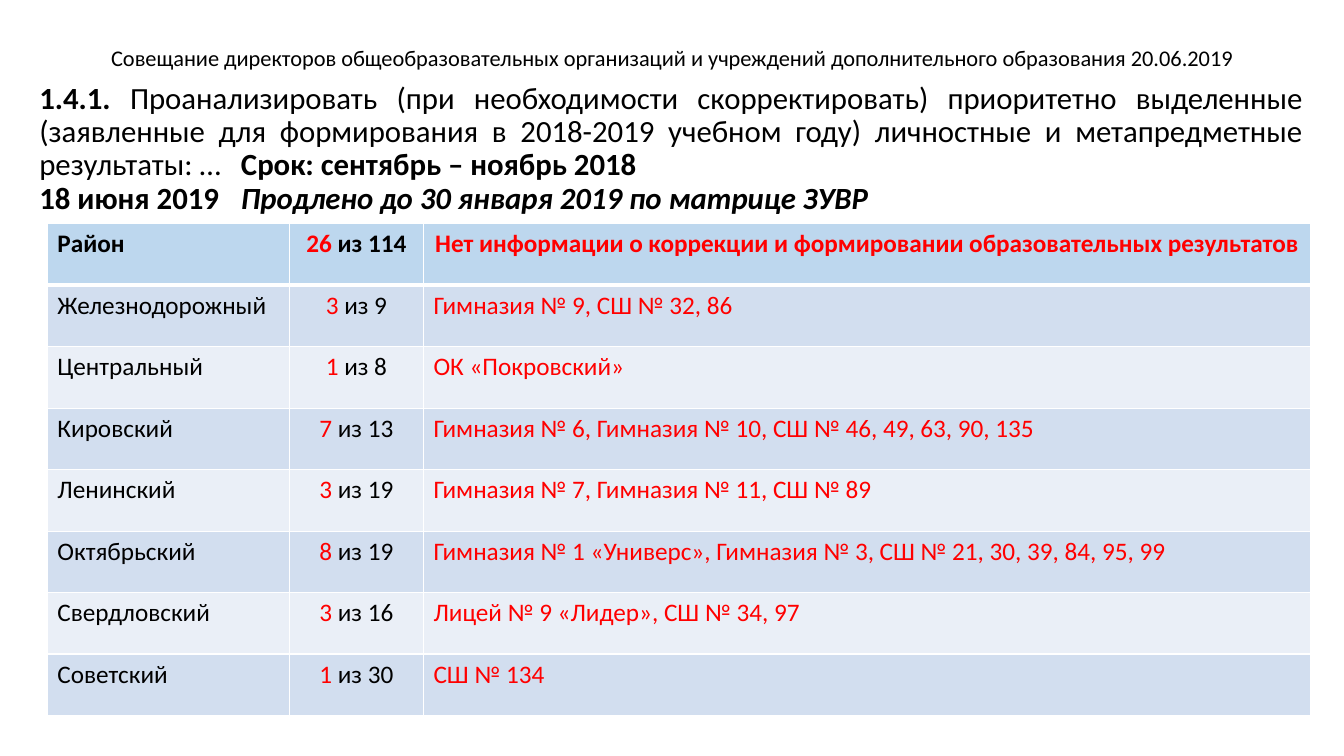
from lxml import etree
from pptx import Presentation
from pptx.dml.color import RGBColor
from pptx.enum.text import MSO_ANCHOR, MSO_AUTO_SIZE, PP_ALIGN
from pptx.oxml.ns import qn
from pptx.util import Pt

EMU_PER_PX = 9144
LEFT, CENTER, JUSTIFY = PP_ALIGN.LEFT, PP_ALIGN.CENTER, PP_ALIGN.JUSTIFY
MIDDLE = MSO_ANCHOR.MIDDLE
NO_AUTOFIT = MSO_AUTO_SIZE.NONE
BLACK, RED, WHITE = "000000", "FF0000", "FFFFFF"
HEADER_FILL, ODD_FILL, EVEN_FILL = "BDD7EE", "D2DEEF", "EAEFF7"

TITLE = ("Совещание директоров общеобразовательных организаций и учреждений "
         "дополнительного образования 20.06.2019")
TASK = ("Проанализировать (при необходимости скорректировать) приоритетно выделенные "
        "(заявленные для формирования в 2018-2019 учебном году) личностные и "
        "метапредметные результаты: …\t")
DISTRICTS = [
    ("Район", 26, 114, "Нет информации о коррекции и формировании образовательных результатов"),
    ("Железнодорожный", 3, 9, "Гимназия № 9, СШ № 32, 86"),
    ("Центральный", 1, 8, "ОК «Покровский»"),
    ("Кировский", 7, 13, "Гимназия № 6, Гимназия № 10, СШ № 46, 49, 63, 90, 135"),
    ("Ленинский", 3, 19, "Гимназия № 7, Гимназия № 11, СШ № 89"),
    ("Октябрьский", 8, 19, "Гимназия № 1 «Универс», Гимназия № 3, СШ № 21, 30, 39, 84, 95, 99"),
    ("Свердловский", 3, 16, "Лицей № 9 «Лидер», СШ № 34, 97"),
    ("Советский", 1, 30, "СШ № 134"),
]


def px(length):
    return length * EMU_PER_PX


def color(value):
    return RGBColor.from_string(value)


class SlideBuilder:
    """Holds the text style and the current slide, and adds elements to it."""

    def __init__(self, slide, font_name):
        self.slide = slide
        self.font_name = font_name

    def add_runs(self, paragraph, runs, size, alignment):
        paragraph.alignment = alignment
        for text, value, bold, italic in runs:
            run = paragraph.add_run()
            run.text = text
            font = run.font
            font.name, font.size = self.font_name, Pt(size)
            font.bold, font.italic = bold, italic
            font.color.rgb = color(value)

    def place(self, shape, left, top, width, height):
        shape.left, shape.top = px(left), px(top)
        shape.width, shape.height = px(width), px(height)
        shape.text_frame.word_wrap = True
        shape.text_frame.auto_size = NO_AUTOFIT

    def title(self, text, size, *box):
        shape = self.slide.shapes.title
        self.place(shape, *box)
        shape.text_frame.vertical_anchor = MIDDLE
        paragraph = shape.text_frame.paragraphs[0]
        paragraph.line_spacing = 0.9
        self.add_runs(paragraph, [(text, BLACK, False, False)], size, CENTER)

    def body(self, entries, size, *box):
        shape = self.slide.placeholders[1]
        self.place(shape, *box)
        frame = shape.text_frame
        for index, (runs, space_before, tab, tab_alignment) in enumerate(entries):
            paragraph = frame.add_paragraph() if index else frame.paragraphs[0]
            self.add_runs(paragraph, runs, size, JUSTIFY)
            paragraph.line_spacing = 0.9
            paragraph.space_before = Pt(space_before)
            properties = paragraph._p.get_or_add_pPr()
            properties.set("marL", "0")
            properties.set("indent", "0")
            etree.SubElement(properties, qn("a:buNone"))
            tabs = etree.SubElement(properties, qn("a:tabLst"))
            etree.SubElement(tabs, qn("a:tab"), pos=str(px(tab)), algn=tab_alignment)

    def borders(self, cell, bottom):
        properties = cell._tc.get_or_add_tcPr()
        widths = {"lnL": 1, "lnR": 1, "lnT": 1, "lnB": bottom}
        for index, (side, width) in enumerate(widths.items()):
            line = etree.Element(qn(f"a:{side}"), w=str(Pt(width)))
            fill = etree.SubElement(line, qn("a:solidFill"))
            etree.SubElement(fill, qn("a:srgbClr"), val=WHITE)
            properties.insert(index, line)

    def table(self, districts, size, left, top, column_widths, row_height):
        table = self.slide.shapes.add_table(
            len(districts), len(column_widths), px(left), px(top),
            px(sum(column_widths)), px(row_height * len(districts))).table
        for column, width in zip(table.columns, column_widths):
            column.width = px(width)
        for index, (district, count, total, schools) in enumerate(districts):
            header = index == 0
            fill = HEADER_FILL if header else ODD_FILL if index % 2 else EVEN_FILL
            contents = [
                ([(district, BLACK, header, False)], LEFT),
                ([(str(count), RED, header, False),
                  (f" из {total}", BLACK, header, False)], CENTER),
                ([(schools, RED, header, False)], CENTER if header else LEFT),
            ]
            for cell, (runs, alignment) in zip(table.rows[index].cells, contents):
                cell.fill.solid()
                cell.fill.fore_color.rgb = color(fill)
                self.borders(cell, 3 if header else 1)
                self.add_runs(cell.text_frame.paragraphs[0], runs, size, alignment)


def main():
    presentation = Presentation()
    presentation.slide_width, presentation.slide_height = px(1333), px(750)
    slide = presentation.slides.add_slide(presentation.slide_layouts[1])
    builder = SlideBuilder(slide, "Calibri")
    builder.title(TITLE, 16, 92, 40, 1150, 37)
    builder.body([
        ([("1.4.1. ", BLACK, True, False), (TASK, BLACK, False, False),
          ("Срок: сентябрь – ноябрь 2018", BLACK, True, False)], 10, 1252, "r"),
        ([("18 июня 2019\t", BLACK, True, False),
          ("Продлено до 30 января 2019 по матрице ЗУВР", BLACK, True, True)], 0, 528, "l"),
    ], 22, 29, 77, 1273, 633)
    builder.table(DISTRICTS, 18, 47, 222, (240, 133, 880), 61)
    presentation.save("out.pptx")


if __name__ == "__main__":
    main()
